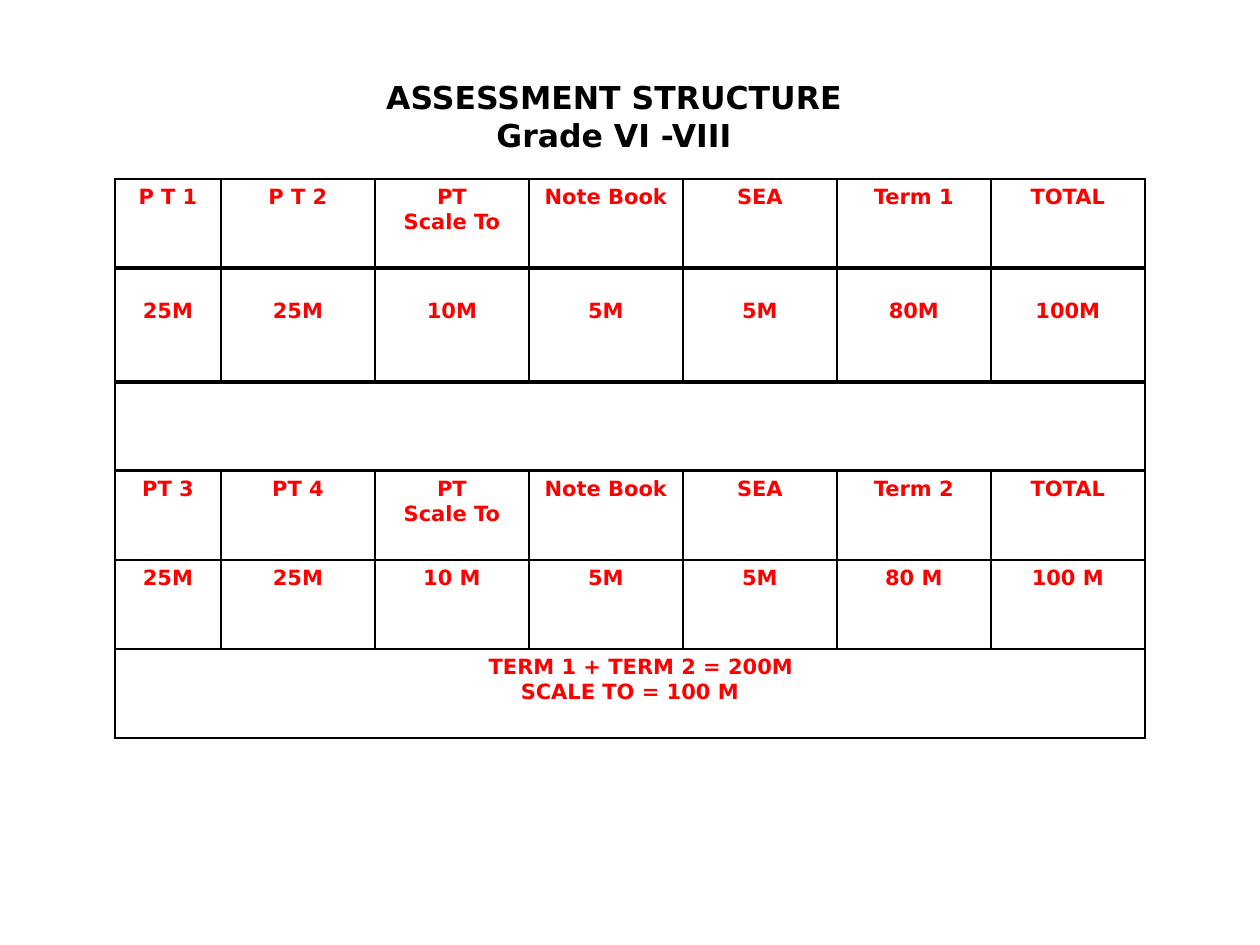
"""Build the assessment structure slide for Grades VI to VIII."""
from lxml.etree import SubElement
from pptx import Presentation
from pptx.dml.color import RGBColor
from pptx.enum.text import PP_ALIGN
from pptx.oxml.ns import qn
from pptx.util import Pt

PX = 914400 // 126
COLORS = {"title": "000000", "border": "000000", "marks": "FF0000"}
FONT = "DejaVu Sans"


def write_text(text_frame, text, size, color):
    text_frame.text = text
    for paragraph in text_frame.paragraphs:
        paragraph.alignment = PP_ALIGN.CENTER
        for run in paragraph.runs:
            run.font.name = FONT
            run.font.size = Pt(size)
            run.font.bold = True
            run.font.color.rgb = RGBColor.from_string(COLORS[color])


def add_border(cell, side, width):
    line = SubElement(cell._tc.get_or_add_tcPr(), qn(f"a:ln{side}"), w=str(Pt(width)))
    fill = SubElement(line, qn("a:solidFill"))
    SubElement(fill, qn("a:srgbClr"), val=COLORS["border"])


presentation = Presentation()
presentation.slide_width = 1260 * PX
presentation.slide_height = 945 * PX
slide = presentation.slides.add_slide(presentation.slide_layouts[6])

title = slide.shapes.add_textbox(115 * PX, 72 * PX, 998 * PX, 165 * PX)
title.text_frame.word_wrap = True
write_text(title.text_frame, "ASSESSMENT STRUCTURE\nGrade VI -VIII", 18, "title")

rows = [
    ["P T 1", "P T 2", "PT\nScale To", "Note Book", "SEA", "Term 1", "TOTAL"],
    ["25M", "25M", "10M", "5M", "5M", "80M", "100M"],
    [""],
    ["PT 3", "PT 4", "PT\nScale To", "Note Book", "SEA", "Term 2", "TOTAL"],
    ["25M", "25M", "10 M", "5M", "5M", "80 M", "100 M"],
    ["TERM 1 + TERM 2 = 200M\nSCALE TO = 100 M"],
]
column_widths = [106] + [154] * 6
row_heights = [89, 114, 89, 89, 89, 89]
row_edges = [1, 2, 2, 2, 1, 1, 1]

frame = slide.shapes.add_table(
    len(rows), len(column_widths), 115 * PX, 179 * PX,
    sum(column_widths) * PX, sum(row_heights) * PX,
)
table = frame.table
table.first_row = False
table.horz_banding = False
for column, width in zip(table.columns, column_widths):
    column.width = width * PX
for row, height in zip(table.rows, row_heights):
    row.height = height * PX

for row_index, texts in enumerate(rows):
    if len(texts) == 1:
        last_cell = table.cell(row_index, len(column_widths) - 1)
        table.cell(row_index, 0).merge(last_cell)
    for column_index, text in enumerate(texts):
        cell = table.cell(row_index, column_index)
        write_text(cell.text_frame, text, 12, "marks")
        top, bottom = row_edges[row_index:row_index + 2]
        for side, width in {"L": 1, "R": 1, "T": top, "B": bottom}.items():
            add_border(cell, side, width)
        cell.fill.background()
        if row_index == 1:
            cell.margin_top = 31 * PX

term_sum = table.cell(5, 0).text_frame.paragraphs[0]
term_sum._p.get_or_add_pPr().set("marL", str(22 * PX))

presentation.save("out.pptx")
